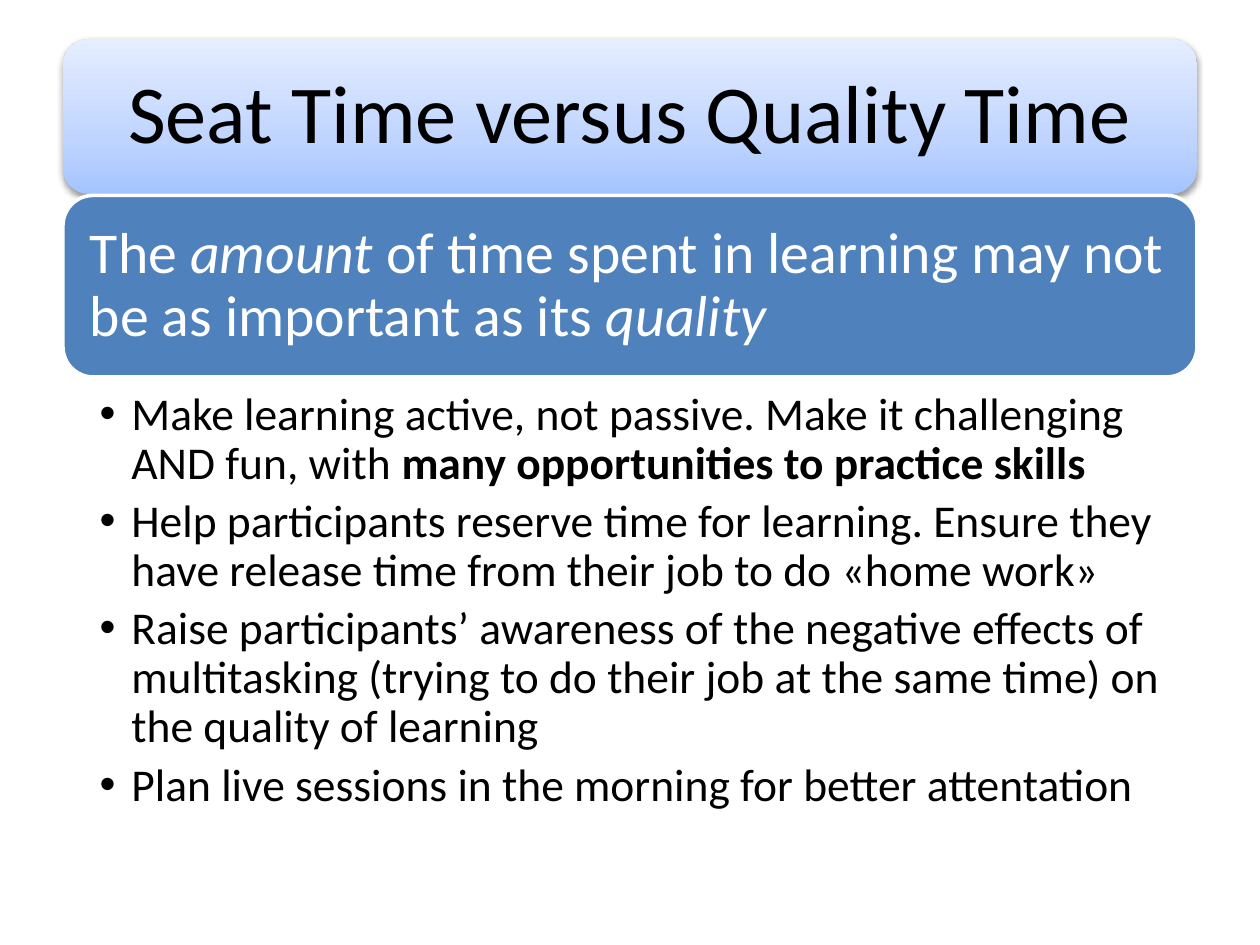
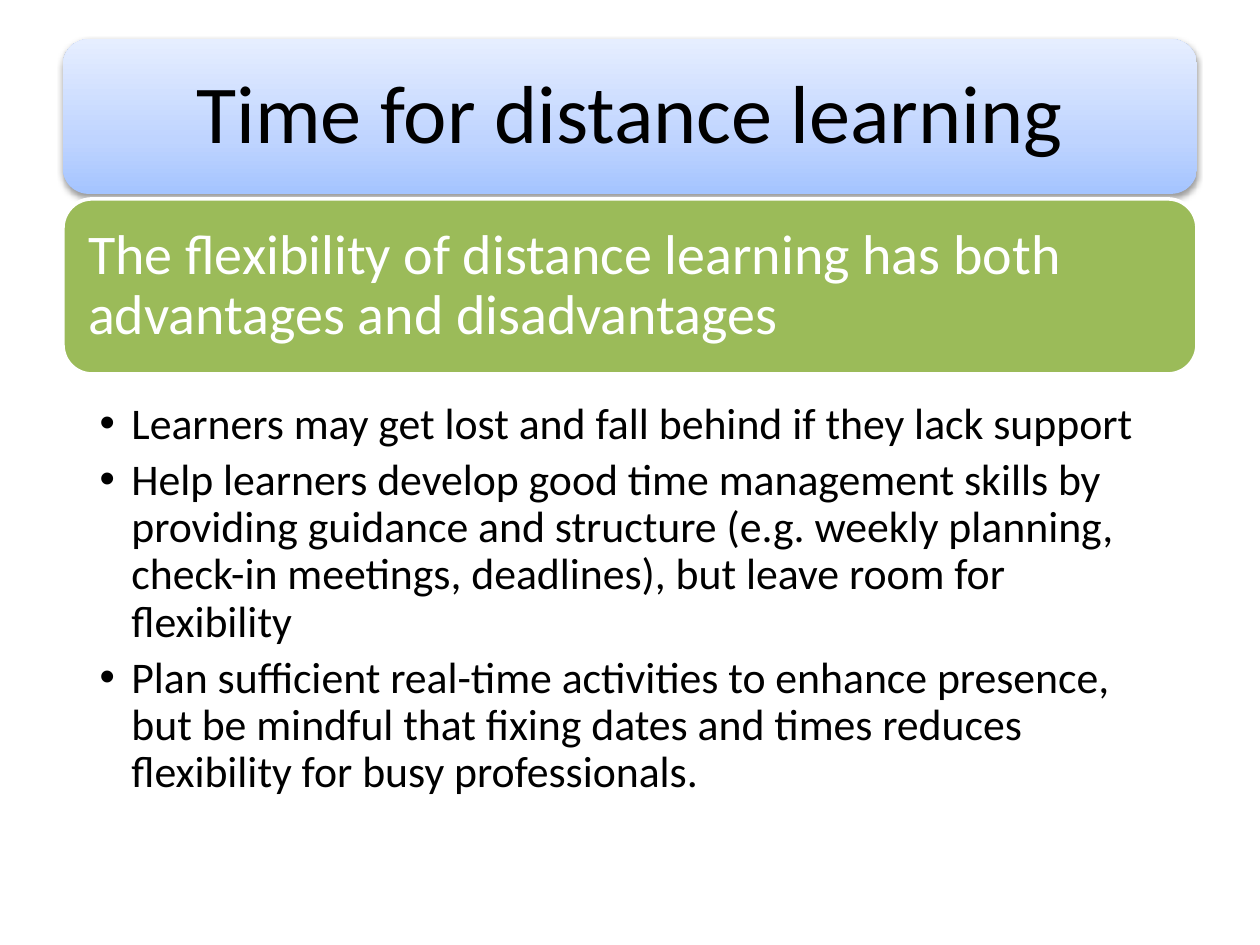
from lxml.etree import SubElement
from pptx import Presentation
from pptx.dml.color import RGBColor
from pptx.enum.shapes import MSO_SHAPE
from pptx.enum.text import MSO_ANCHOR, MSO_AUTO_SIZE, PP_ALIGN
from pptx.oxml import parse_xml
from pptx.oxml.ns import nsdecls, qn
from pptx.util import Cm, Pt

# A paragraph is a list of (text, style) runs; style is "", "i" or "b".
SLIDES = [
    dict(
        title="Seat Time versus Quality Time",
        color="4F81BD",
        card=dict(top=3.94, height=3.66, size=33, inset=0.36),
        claim=[("The ", ""), ("amount", "i"),
               (" of time spent in learning may not be as important as its ", ""),
               ("quality", "i")],
        list=dict(top=7.75, height=9.12, size=26, insets=(0.74, 0.13, 0.66, 0.13)),
        points=[
            [("Make learning active, not passive. Make it challenging AND fun, with ", ""),
             ("many opportunities to practice skills", "b")],
            [("Help participants reserve time for learning. Ensure they have release "
              "time from their job to do «home work»", "")],
            [("Raise participants’ awareness of the negative effects of multitasking "
              "(trying to do their job at the same time) on the quality of learning", "")],
            [("Plan live sessions in the morning for better attentation", "")],
        ],
    ),
    dict(
        title="Time for distance learning",
        color="9BBB59",
        card=dict(top=4.01, height=3.53, size=32, inset=0.33),
        claim=[("The flexibility of distance learning has both advantages and "
                "disadvantages", "")],
        list=dict(top=8, height=8.46, size=25, insets=(0.74, 0.1, 0.64, 0.1)),
        points=[
            [("Learners may get lost and fall behind if they lack support", "")],
            [("Help learners develop good time management skills by providing guidance "
              "and structure (e.g. weekly planning, check-in meetings, deadlines), but "
              "leave room for flexibility", "")],
            [("Plan sufficient real-time activities to enhance presence, but be mindful "
              "that fixing dates and times reduces flexibility for busy professionals.", "")],
        ],
    ),
]

FONT, BLACK, WHITE = "Calibri", "000000", "FFFFFF"
LEFT, WIDTH = 1.27, 22.86
BANNER = dict(top=0.79, height=3.12, size=47, inset=0.51)
STOPS = [(0, "A4C4FF"), (35, "BFD4FF"), (100, "E6EEFF")]
CORNER = 0.05  # text inset of a rounded box, as a share of its height
INDENT = 0.64


def rgb(code):
    return RGBColor.from_string(code)


def inner(box):
    """Area inside the rounded corners of a full-width box."""
    pad = CORNER * box["height"]
    return [Cm(v) for v in (LEFT + pad, box["top"] + pad,
                            WIDTH - 2 * pad, box["height"] - 2 * pad)]


def set_frame(frame, insets, anchor):
    frame.word_wrap = True
    frame.auto_size = MSO_AUTO_SIZE.NONE
    frame.vertical_anchor = anchor
    (frame.margin_left, frame.margin_top,
     frame.margin_right, frame.margin_bottom) = [Cm(v) for v in insets]


def write(para, runs, size, color, align=PP_ALIGN.LEFT):
    para.alignment = align
    para.line_spacing = 0.9
    for text, style in runs:
        run = para.add_run()
        run.text = text
        font = run.font
        font.name, font.size = FONT, Pt(size)
        font.color.rgb = rgb(color)
        font.italic, font.bold = style == "i", style == "b"


def add_round(slide, box):
    shape = slide.shapes.add_shape(MSO_SHAPE.ROUNDED_RECTANGLE, Cm(LEFT),
                                   Cm(box["top"]), Cm(WIDTH), Cm(box["height"]))
    shape.shadow.inherit = False
    return shape


def add_banner(slide):
    """Gradient box with a soft shadow, placed behind the title."""
    shape = add_round(slide, BANNER)
    shape.line.fill.background()
    props = shape._element.spPr
    stops = "".join(f'<a:gs pos="{pos * 1000}"><a:srgbClr val="{code}"/></a:gs>'
                    for pos, code in STOPS)
    props.find(qn("a:prstGeom")).addnext(parse_xml(
        f'<a:gradFill {nsdecls("a")} rotWithShape="1"><a:gsLst>{stops}</a:gsLst>'
        '<a:lin ang="16200000" scaled="0"/></a:gradFill>'))
    props.find(qn("a:effectLst")).append(parse_xml(
        f'<a:outerShdw {nsdecls("a")} blurRad="{Pt(3.1)}" dist="{Pt(1.6)}" '
        f'dir="5400000" rotWithShape="0"><a:srgbClr val="{BLACK}">'
        '<a:alpha val="38000"/></a:srgbClr></a:outerShdw>'))
    slide.shapes._spTree.insert(2, shape._element)


def set_title(slide, text):
    title = slide.shapes.title
    title.left, title.top, title.width, title.height = inner(BANNER)
    set_frame(title.text_frame, [BANNER["inset"]] * 4, MSO_ANCHOR.MIDDLE)
    write(title.text_frame.paragraphs[0], [(text, "")], BANNER["size"], BLACK,
          PP_ALIGN.CENTER)


def add_card(slide, card, color, claim):
    shape = add_round(slide, card)
    shape.fill.solid()
    shape.fill.fore_color.rgb = rgb(color)
    shape.line.color.rgb = rgb(WHITE)
    shape.line.width = Pt(2)
    frame = slide.shapes.add_textbox(*inner(card)).text_frame
    set_frame(frame, [card["inset"]] * 4, MSO_ANCHOR.MIDDLE)
    write(frame.paragraphs[0], claim, card["size"], WHITE)


def add_list(slide, box, points):
    frame = slide.shapes.add_textbox(Cm(LEFT), Cm(box["top"]), Cm(WIDTH),
                                     Cm(box["height"])).text_frame
    set_frame(frame, box["insets"], MSO_ANCHOR.TOP)
    for i, runs in enumerate(points):
        para = frame.add_paragraph() if i else frame.paragraphs[0]
        para.level = 1
        props = para._p.get_or_add_pPr()
        props.set("marL", str(Cm(INDENT)))
        props.set("indent", str(-Cm(INDENT)))
        SubElement(props, qn("a:buFont"), typeface="Arial")
        SubElement(props, qn("a:buChar"), char="•")
        para.space_after = Pt(0.2 * box["size"])
        write(para, runs, box["size"], BLACK)


def main():
    deck = Presentation()
    deck.slide_width, deck.slide_height = Cm(25.4), Cm(19.05)
    for data in SLIDES:
        slide = deck.slides.add_slide(deck.slide_layouts[5])
        add_banner(slide)
        set_title(slide, data["title"])
        add_card(slide, data["card"], data["color"], data["claim"])
        add_list(slide, data["list"], data["points"])
    deck.save("out.pptx")


if __name__ == "__main__":
    main()
